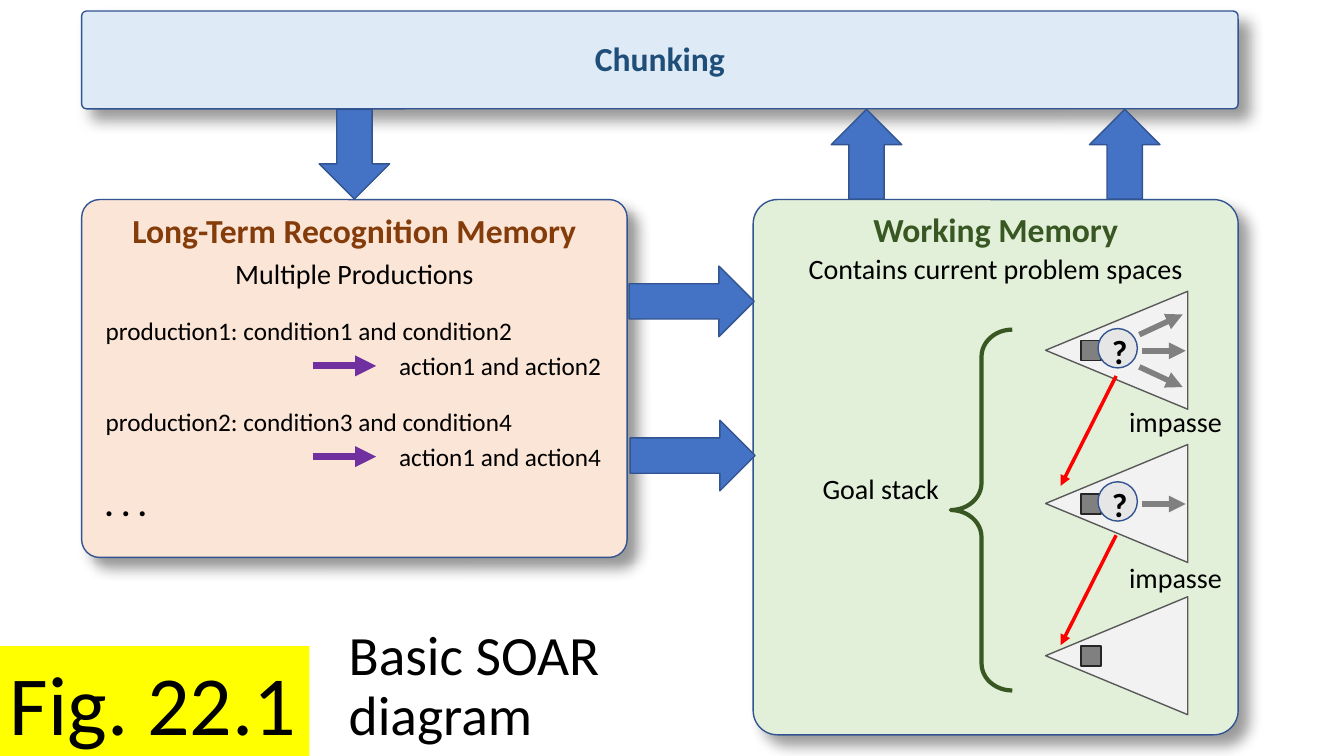
from dataclasses import dataclass

from lxml import etree
from pptx import Presentation
from pptx import util as u
from pptx.dml.color import RGBColor
from pptx.enum import shapes, text
from pptx.oxml import ns

PX = 9144  # one px is a hundredth of an inch
SHAPE = shapes.MSO_SHAPE


@dataclass(frozen=True)
class Theme:
    font: str = "Calibri"
    black: str = "000000"
    edge: str = "325491"
    arrow: str = "4472C4"
    blue: str = "DEEBF7"
    blue_text: str = "1F4E79"
    orange: str = "FBE5D6"
    orange_text: str = "843C0B"
    green: str = "E2F0D9"
    green_text: str = "385723"
    purple: str = "7030A0"
    red: str = "FF0000"
    yellow: str = "FFFF00"
    space: str = "F2F2F2"
    space_edge: str = "595959"
    state: str = "808080"
    state_edge: str = "262626"
    impasse: str = "E7E6E6"
    small: float = 18
    body: float = 20
    heading: float = 24
    title: float = 39.6
    figure: float = 60


class Diagram:
    def __init__(self, slide, theme):
        self.slide = slide
        self.theme = theme

    def shape(self, kind, box, fill=None, line=None, width=1, adjust=(), rotation=0):
        shape = self.slide.shapes.add_shape(kind, *(n * PX for n in box))
        shape.shadow.inherit = False
        shape.rotation = rotation
        for index, value in enumerate(adjust):
            shape.adjustments[index] = value
        if fill:
            shape.fill.solid()
            shape.fill.fore_color.rgb = RGBColor.from_string(fill)
        else:
            shape.fill.background()
        if line:
            shape.line.color.rgb = RGBColor.from_string(line)
            shape.line.width = u.Pt(width)
        else:
            shape.line.fill.background()
        return shape

    def panel(self, box, fill):
        """Rounded panel with a soft shadow towards the lower right."""
        shape = self.shape(SHAPE.ROUNDED_RECTANGLE, box, fill, self.theme.edge, adjust=[0.05])
        effects = shape._element.spPr.find(ns.qn("a:effectLst"))
        shadow = etree.SubElement(
            effects, ns.qn("a:outerShdw"), blurRad=str(u.Pt(10)), dist=str(u.Pt(10)),
            dir="2700000", algn="tl", rotWithShape="0")
        color = etree.SubElement(shadow, ns.qn("a:srgbClr"), val=self.theme.black)
        etree.SubElement(color, ns.qn("a:alpha"), val="40000")

    def block_arrow(self, left, top, length, rotation=0):
        self.shape(SHAPE.RIGHT_ARROW, (left, top, length, 70), self.theme.arrow,
                   self.theme.edge, rotation=rotation)

    def arrow(self, start, end, color, width):
        connector = self.slide.shapes.add_connector(
            shapes.MSO_CONNECTOR.STRAIGHT, *(n * PX for n in (*start, *end)))
        connector.line.color.rgb = RGBColor.from_string(color)
        connector.line.width = u.Pt(width)
        outline = connector._element.spPr.find(ns.qn("a:ln"))
        etree.SubElement(outline, ns.qn("a:tailEnd"), type="triangle")
        etree.SubElement(connector._element.spPr, ns.qn("a:effectLst"))

    def fill_text(self, shape, words, size, color=None, bold=False, center=False,
                  frame_format=None):
        frame = shape.text_frame
        paragraph = frame.paragraphs[0]
        run = paragraph.add_run()
        run.text = words
        frame_values = {
            "word_wrap": False,
            "auto_size": text.MSO_AUTO_SIZE.SHAPE_TO_FIT_TEXT,
            "vertical_anchor": text.MSO_ANCHOR.TOP,
            **(frame_format or {}),
        }
        font_values = {"name": self.theme.font, "size": u.Pt(size), "bold": bold}
        for target, values in ((frame, frame_values), (run.font, font_values)):
            for name, value in values.items():
                setattr(target, name, value)
        run.font.color.rgb = RGBColor.from_string(color or self.theme.black)
        paragraph.alignment = text.PP_ALIGN.CENTER if center else text.PP_ALIGN.LEFT
        return paragraph

    def label(self, box, words, size, **style):
        shape = self.slide.shapes.add_textbox(*(n * PX for n in box))
        return self.fill_text(shape, words, size, **style)

    def heading(self, box, words, color):
        self.label(box, words, self.theme.heading, color=color, bold=True, center=True)

    def problem_space(self, top, slopes):
        """Triangle with its state; each slope is one operator leaving an impasse."""
        theme = self.theme
        self.shape(SHAPE.ISOSCELES_TRIANGLE, (1049, top, 117, 141), theme.space,
                   theme.space_edge, rotation=270)
        self.shape(SHAPE.RECTANGLE, (1072, top + 61, 20, 20), theme.state, theme.state_edge)
        if slopes:
            self.shape(SHAPE.OVAL, (1089, top + 49, 39, 39), theme.impasse, theme.edge)
            self.label((1093, top + 46, 36, 50), "?", theme.heading, bold=True)
        for slope in slopes:
            left = 1130 if slope else 1133
            middle = top + 71
            self.arrow((left, middle + 16 * slope), (left + 43, middle + 36 * slope),
                       theme.state, 4)


def main():
    presentation = Presentation()
    presentation.slide_width = 1333 * PX
    presentation.slide_height = 750 * PX
    slide = presentation.slides.add_slide(presentation.slide_layouts[6])
    theme = Theme()
    diagram = Diagram(slide, theme)

    # Long-term memory and its productions
    diagram.panel((81, 198, 541, 355), theme.orange)
    diagram.heading((118, 203, 467, 50), "Long-Term Recognition Memory", theme.orange_text)
    diagram.label((222, 250, 259, 44), "Multiple Productions", theme.body, center=True)
    productions = [
        ("production1: condition1 and condition2", "action1 and action2"),
        ("production2: condition3 and condition4", "action1 and action4"),
    ]
    for index, (condition, action) in enumerate(productions):
        top = 308 + 90 * index
        diagram.label((95, top, 429, 40), condition, theme.small)
        diagram.label((386, top + 35, 223, 40), action, theme.small)
        diagram.arrow((310, top + 55), (373, top + 55), theme.purple, 5)
    diagram.label((94, 474, 62, 50), ". . .", theme.heading, bold=True)

    # Chunking
    diagram.panel((81, 11, 1147, 97), theme.blue)
    diagram.heading((578, 33, 153, 50), "Chunking", theme.blue_text)

    # Working memory
    diagram.panel((747, 198, 481, 531), theme.green)
    diagram.heading((855, 202, 265, 50), "Working Memory", theme.green_text)
    diagram.label((790, 245, 395, 44), "Contains current problem spaces", theme.body, center=True)

    # Goal stack
    diagram.label((806, 463, 137, 44), "Goal stack", theme.body)
    diagram.shape(SHAPE.LEFT_BRACE, (943, 327, 61, 358), line=theme.green_text, width=3,
                  adjust=[0.44, 0.5])
    for top, slopes in ((277, (0, 1, -1)), (429, (0,)), (580, ())):
        diagram.problem_space(top, slopes)
    for label_top, arrow_top in ((396, 373), (551, 531)):
        diagram.label((1110, label_top, 113, 44), "impasse", theme.body)
        diagram.arrow((1107, arrow_top), (1052, arrow_top + 109), theme.red, 2.5)

    # Flow between the three parts
    for left, top in ((624, 264), (625, 417)):
        diagram.block_arrow(left, top, 124)
    for left, rotation in ((307, 90), (815, 270), (1071, 270)):
        diagram.block_arrow(left, 118, 89, rotation)

    # Figure number and title
    figure = diagram.shape(SHAPE.RECTANGLE, (0, 641, 307, 111), theme.yellow)
    diagram.fill_text(figure, "Fig. 22.1", theme.figure)
    title = diagram.label(
        (336, 614, 307, 136), "Basic SOAR diagram", theme.title,
        frame_format={"word_wrap": True, "auto_size": text.MSO_AUTO_SIZE.NONE,
                      "vertical_anchor": text.MSO_ANCHOR.MIDDLE})
    title.line_spacing = 0.9

    presentation.save("out.pptx")


if __name__ == "__main__":
    main()
